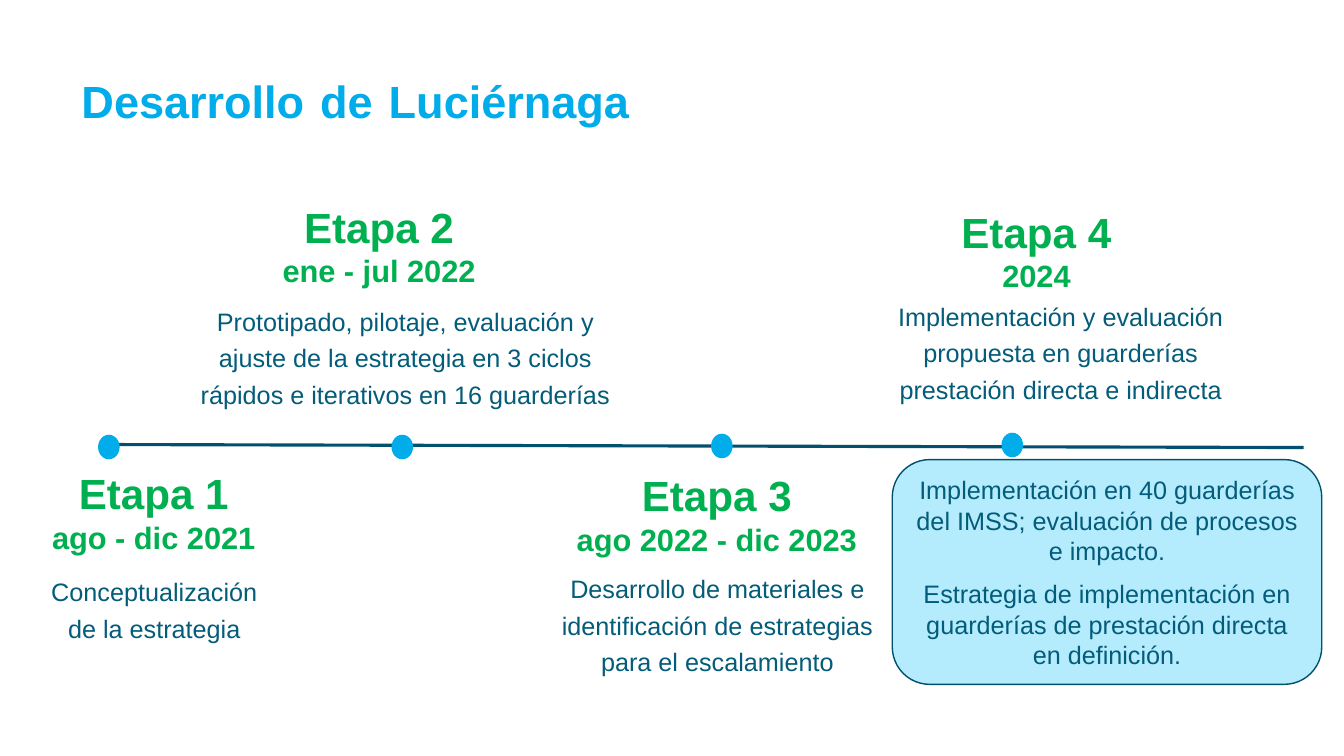
from pptx import Presentation
from pptx.dml.color import RGBColor
from pptx.enum.shapes import MSO_CONNECTOR, MSO_SHAPE
from pptx.enum.text import MSO_ANCHOR, PP_ALIGN
from pptx.oxml.ns import qn
from pptx.util import Inches, Pt
from lxml.etree import SubElement

SKY = RGBColor(0x00, 0xAC, 0xE9)
GREEN = RGBColor(0x00, 0xB0, 0x50)
TEAL = RGBColor(0x03, 0x5C, 0x79)
NAVY = RGBColor(0x00, 0x50, 0x6E)
PALE = RGBColor(0xB4, 0xEB, 0xFD)

DOT_W, DOT_H = 0.2, 0.23

# Each stage: name, dates, heading box, description, description box
STAGES = [
    ("Etapa 1", "ago - dic 2021", (0.45, 4.62, 2.15, 0.93),
     "Conceptualización de la estrategia", (0.31, 5.64, 2.44, 0.92)),
    ("Etapa 2", "ene - jul 2022", (2.74, 1.98, 2.04, 0.93),
     "Prototipado, pilotaje, evaluación y ajuste de la estrategia en 3 ciclos "
     "rápidos e iterativos en 16 guarderías", (1.9, 2.96, 4.24, 1.11)),
    ("Etapa 3", "ago 2022 - dic 2023", (5.65, 4.64, 2.92, 0.93),
     "Desarrollo de materiales e identificación de estrategias para el "
     "escalamiento", (5.41, 5.61, 3.41, 1.11)),
    ("Etapa 4", "2024", (9.48, 2.03, 1.6, 0.93),
     "Implementación y evaluación propuesta en guarderías prestación directa "
     "e indirecta", (8.8, 2.91, 3.44, 1.47)),
]
DOTS = [(0.98, 4.32), (3.89, 4.32), (7.06, 4.31), (9.94, 4.3)]


def add_run(paragraph, text, *, size, color, bold=False):
    run = paragraph.add_run()
    run.text = text
    font = run.font
    font.name, font.size, font.bold = "Arial", Pt(size), bold
    font.color.rgb = color


def add_text_frame(slide, box, *, wrap=True, tight=True):
    frame = slide.shapes.add_textbox(*map(Inches, box)).text_frame
    frame.word_wrap = wrap
    if tight:
        frame.margin_left = frame.margin_right = Inches(0.05)
        frame.margin_top = frame.margin_bottom = Inches(0.02)
    return frame


def add_filled(slide, kind, box, *, fill, line):
    shape = slide.shapes.add_shape(kind, *map(Inches, box))
    shape.shadow.inherit = False
    shape.fill.solid()
    shape.fill.fore_color.rgb = fill
    shape.line.color.rgb = line
    shape.line.width = Pt(1)
    return shape


def add_title(slide, box):
    frame = add_text_frame(slide, box, tight=False)
    frame.vertical_anchor = MSO_ANCHOR.BOTTOM
    title = frame.paragraphs[0]
    title.line_spacing = 0.9
    # Larger spaces widen the gaps between the words
    for text, size in (("Desarrollo", 32.2), (" ", 41), ("de", 32.2),
                       (" ", 41), ("Luciérnaga", 32.2)):
        add_run(title, text, size=size, color=SKY, bold=True)


def add_stage(slide, name, dates, heading_box, description, description_box):
    heading = add_text_frame(slide, heading_box, wrap=False)
    name_line, dates_line = heading.paragraphs[0], heading.add_paragraph()
    for line, text, size in ((name_line, name, 30.1), (dates_line, dates, 22)):
        line.alignment = PP_ALIGN.CENTER
        add_run(line, text, size=size, color=GREEN, bold=True)

    body = add_text_frame(slide, description_box).paragraphs[0]
    body.alignment = PP_ALIGN.CENTER
    body.line_spacing = 1.2
    add_run(body, description, size=18, color=TEAL)


def add_timeline(slide, start, end):
    axis = slide.shapes.add_connector(
        MSO_CONNECTOR.STRAIGHT, *map(Inches, start + end))
    axis.line.color.rgb = NAVY
    axis.line.width = Pt(2.25)
    SubElement(axis._element.spPr, qn("a:effectLst"))
    for left, top in DOTS:
        add_filled(slide, MSO_SHAPE.OVAL, (left, top, DOT_W, DOT_H),
                   fill=SKY, line=SKY)


def add_status_card(slide, box):
    card = add_filled(slide, MSO_SHAPE.ROUNDED_RECTANGLE, box,
                      fill=PALE, line=NAVY)
    frame = card.text_frame
    frame.word_wrap = True
    frame.vertical_anchor = MSO_ANCHOR.MIDDLE
    progress, strategy = frame.paragraphs[0], frame.add_paragraph()
    strategy.space_before = Pt(9.5)
    for paragraph, text in (
        (progress, "Implementación en 40 guarderías del IMSS; evaluación de "
                   "procesos e impacto."),
        (strategy, "Estrategia de implementación en guarderías de prestación "
                   "directa en definición."),
    ):
        paragraph.alignment = PP_ALIGN.CENTER
        add_run(paragraph, text, size=18, color=TEAL)


def main():
    deck = Presentation()
    deck.slide_width, deck.slide_height = Inches(13.33), Inches(7.5)
    slide = deck.slides.add_slide(deck.slide_layouts[6])

    add_title(slide, (0.71, 0.54, 11.78, 0.81))
    add_timeline(slide, (1.02, 4.41), (12.93, 4.44))
    for stage in STAGES:
        add_stage(slide, *stage)
    add_status_card(slide, (8.85, 4.56, 4.26, 2.23))

    deck.save("out.pptx")


if __name__ == "__main__":
    main()
